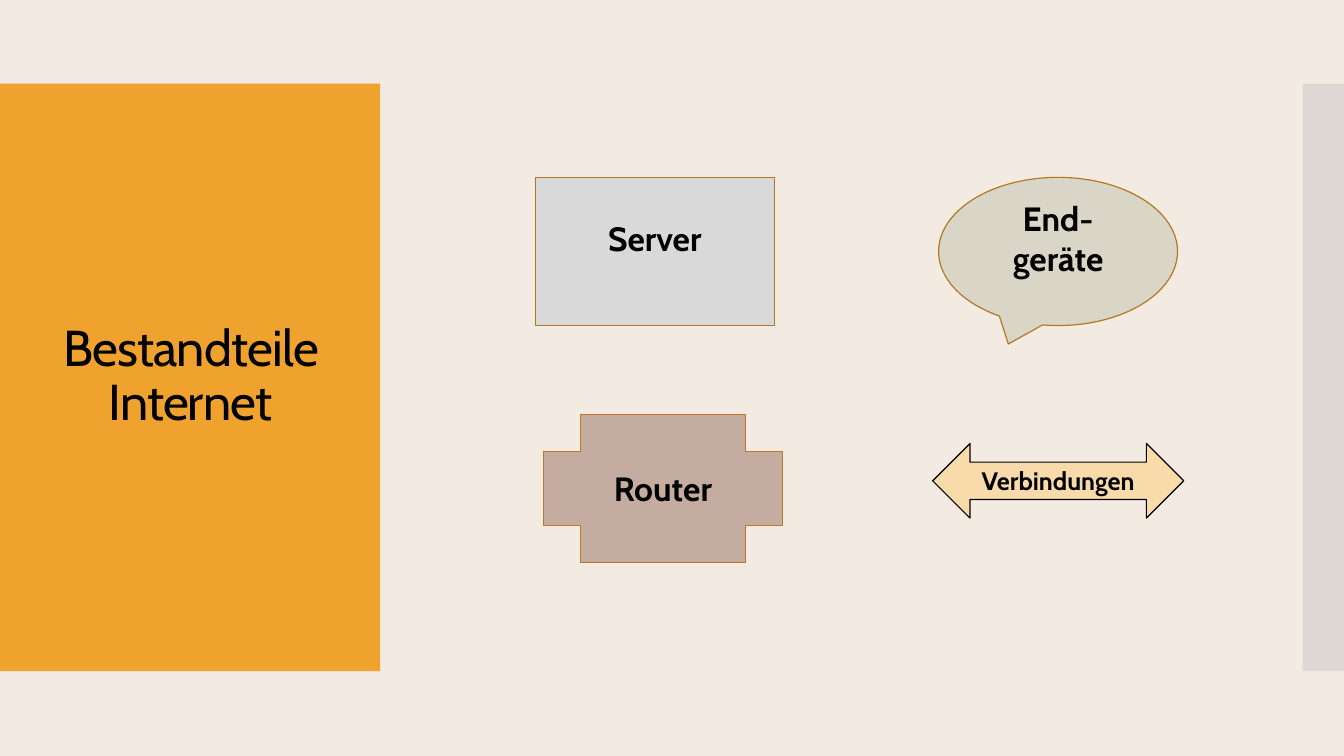
from dataclasses import dataclass

from pptx import Presentation
from pptx.dml.color import RGBColor
from pptx.enum.shapes import MSO_SHAPE as Shape
from pptx.enum.text import MSO_ANCHOR as Anchor, PP_ALIGN as Align
from pptx.oxml.ns import qn
from pptx.oxml.xmlchemy import OxmlElement
from pptx.util import Inches, Pt


@dataclass(frozen=True)
class Theme:
    font: str = "Cabin"
    background: str = "F3EAE2"
    text: str = "000000"
    accent: str = "F0A22E"
    side_bar: str = "C8C8C8"
    server: str = "D9D9D9"
    router: str = "C4ADA0"
    device: str = "D9D5C7"
    connection: str = "F9DAAB"
    outline: str = "B27822"
    router_outline: str = "C17529"
    title_size: int = 36
    label_size: int = 24
    small_size: int = 18
    line_width: float = 0.85


class SlideBuilder:
    """Draws styled elements on one slide."""

    def __init__(self, slide, theme):
        self.slide = slide
        self.theme = theme
        fill = slide.background.fill
        fill.solid()
        fill.fore_color.rgb = RGBColor.from_string(theme.background)

    def set_text(self, shape, text, size, bold=False):
        frame = shape.text_frame
        frame.word_wrap = True
        frame.vertical_anchor = Anchor.MIDDLE
        paragraph = frame.paragraphs[0]
        paragraph.text = text
        paragraph.alignment = Align.CENTER
        font = paragraph.font
        font.name, font.size, font.bold = self.theme.font, Pt(size), bold
        font.color.rgb = RGBColor.from_string(self.theme.text)
        return paragraph

    def shape(self, kind, box, fill, outline=None):
        shape = self.slide.shapes.add_shape(kind, *map(Inches, box))
        shape.shadow.inherit = False
        shape.fill.solid()
        shape.fill.fore_color.rgb = RGBColor.from_string(fill)
        if outline:
            shape.line.color.rgb = RGBColor.from_string(outline)
            shape.line.width = Pt(self.theme.line_width)
        else:
            shape.line.fill.background()
        return shape

    def panel(self, box, fill, opacity=100):
        panel = self.shape(Shape.RECTANGLE, box, fill)
        if opacity < 100:
            alpha = OxmlElement("a:alpha")
            alpha.set("val", str(opacity * 1000))
            next(panel._element.spPr.iter(qn("a:srgbClr"))).append(alpha)

    def title(self, text, box):
        title = self.slide.shapes.add_textbox(*map(Inches, box))
        paragraph = self.set_text(title, text, self.theme.title_size)
        paragraph.line_spacing = 0.9
        paragraph.runs[0]._r.get_or_add_rPr().set("spc", "-60")

    def labelled(self, kind, box, fill, outline, text, size, insets=(0.05, 0.05)):
        shape = self.shape(kind, box, fill, outline)
        self.set_text(shape, text, size, bold=True)
        frame = shape.text_frame
        frame.margin_top, frame.margin_bottom = map(Inches, insets)


def main():
    theme = Theme()
    presentation = Presentation()
    presentation.slide_width = Inches(13.33)
    presentation.slide_height = Inches(7.5)
    slide = presentation.slides.add_slide(presentation.slide_layouts[6])
    builder = SlideBuilder(slide, theme)

    panel_top, panel_height = 0.83, 5.83
    builder.panel((0, panel_top, 3.77, panel_height), theme.accent)
    builder.panel((12.92, panel_top, 0.41, panel_height), theme.side_bar, opacity=50)
    builder.title("Bestandteile Internet", (0.28, 1.23, 3.22, 5.03))

    node_size = (2.37, 1.47)
    builder.labelled(Shape.RECTANGLE, (5.31, 1.76, *node_size), theme.server,
                     theme.outline, "Server", theme.label_size, (0.05, 0.32))
    builder.labelled(Shape.LEFT_RIGHT_ARROW, (9.25, 4.4, 2.49, 0.74), theme.connection,
                     theme.text, "Verbindungen", theme.small_size)
    builder.labelled(Shape.CROSS, (5.39, 4.11, *node_size), theme.router,
                     theme.router_outline, "Router", theme.label_size)
    builder.labelled(Shape.OVAL_CALLOUT, (9.31, 1.76, *node_size), theme.device,
                     theme.outline, "End-geräte", theme.label_size, (0, 0.27))

    presentation.save("out.pptx")


if __name__ == "__main__":
    main()
